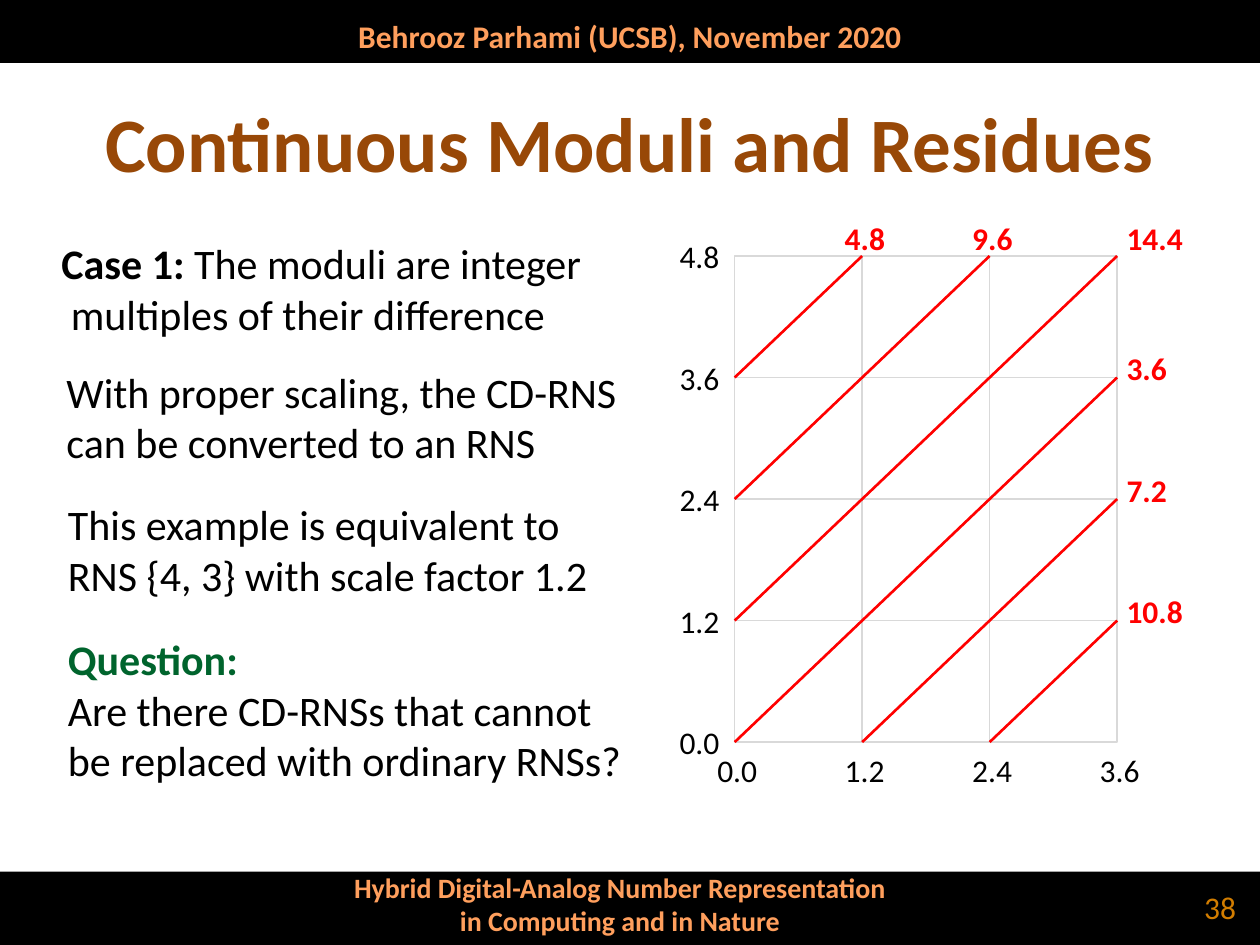
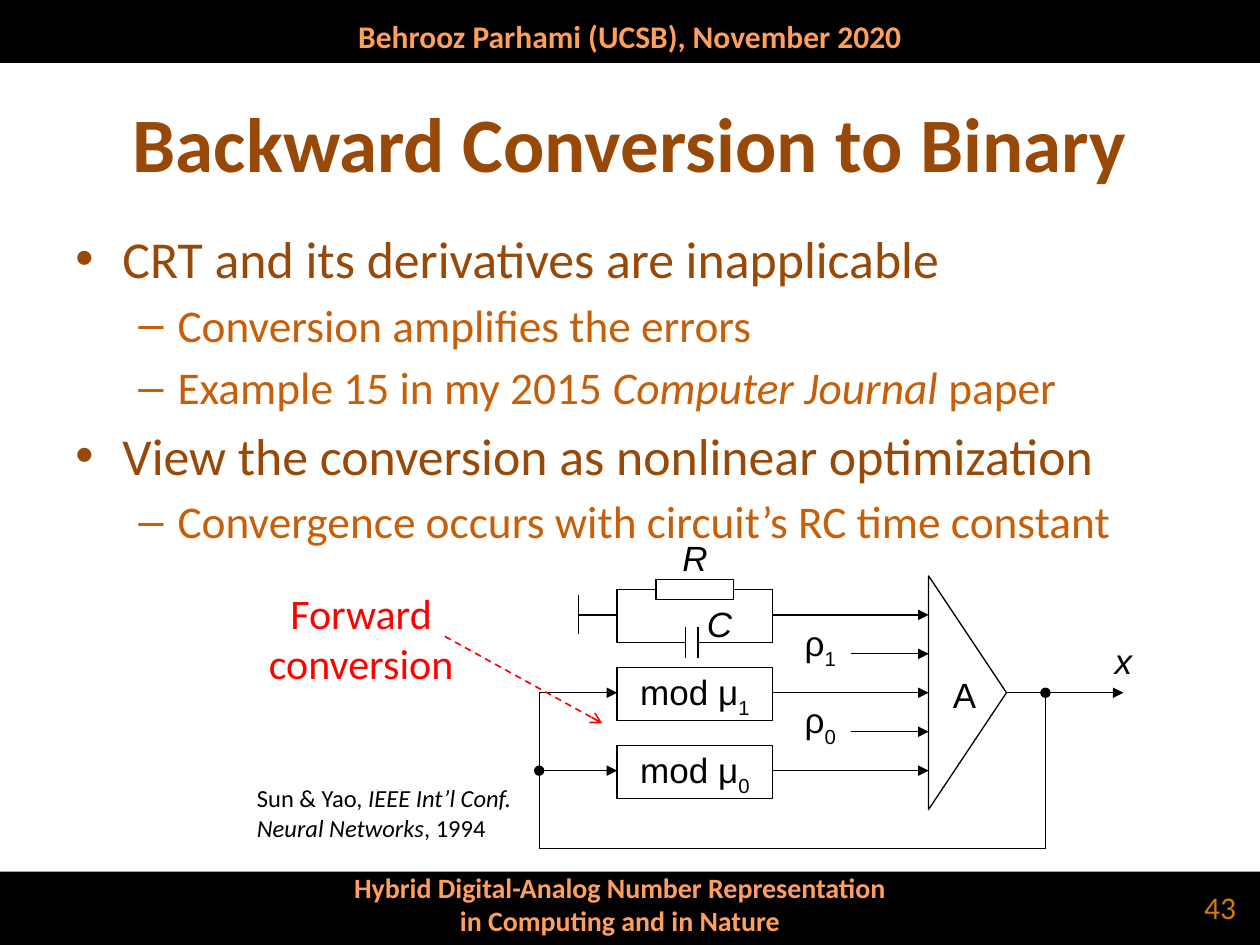
from lxml import etree
from pptx import Presentation
from pptx.dml.color import RGBColor
from pptx.enum.dml import MSO_LINE
from pptx.enum.shapes import MSO_CONNECTOR, MSO_SHAPE
from pptx.enum.text import MSO_ANCHOR, PP_ALIGN
from pptx.oxml.ns import qn
from pptx.util import Cm, Pt

BLACK = RGBColor(0x00, 0x00, 0x00)
WHITE = RGBColor(0xFF, 0xFF, 0xFF)
RED = RGBColor(0xFF, 0x00, 0x00)
GREEN = RGBColor(0x00, 0x64, 0x2D)
BROWN = RGBColor(0x98, 0x48, 0x07)
ORANGE = RGBColor(0xC7, 0x5F, 0x09)
BAND_TEXT = RGBColor(0xFF, 0x9F, 0x5D)
NUMBER = RGBColor(0xD2, 0x7D, 0x00)
GRID = RGBColor(0xD9, 0xD9, 0xD9)

LEFT, CENTER, RIGHT = PP_ALIGN.LEFT, PP_ALIGN.CENTER, PP_ALIGN.RIGHT
TOP, MIDDLE = MSO_ANCHOR.TOP, MSO_ANCHOR.MIDDLE
RECTANGLE = MSO_SHAPE.RECTANGLE
STRAIGHT = MSO_CONNECTOR.STRAIGHT
DASH = MSO_LINE.DASH

WIDTH, HEIGHT = 25.4, 19.05
BODY_FONT, CIRCUIT_FONT = "Calibri", "Arial"

# Bullet levels: symbol, left margin, hanging indent, size, space before, colour
BULLETS = [("•", 0.95, 0.95, 29.6, 5.5, BROWN),
           ("–", 2.06, 0.79, 25.9, 4.5, ORANGE)]


class Deck:
    """Holds the shared style and the current slide; positions are in centimetres."""

    def __init__(self):
        self.presentation = Presentation()
        self.presentation.slide_width = Cm(WIDTH)
        self.presentation.slide_height = Cm(HEIGHT)
        self.slide = None

    def new_slide(self, title, number, title_width):
        layout = self.presentation.slide_layouts[6]
        self.slide = self.presentation.slides.add_slide(layout)
        self.rectangle(0, 17.57, WIDTH, 1.48, BLACK)
        self.text(2.34, 17.42, 20.32, 1.63,
                  ["Hybrid Digital-Analog Number Representation",
                   "in Computing and in Nature"],
                  16, BAND_TEXT, bold=True, align=CENTER)
        self.rectangle(0, 0, WIDTH, 1.27, BLACK)
        self.text(0, 0.08, WIDTH, 1.27, ["Behrooz Parhami (UCSB), November 2020"],
                  18, BAND_TEXT, bold=True, align=CENTER, anchor=MIDDLE)
        self.text(19.25, 17.78, 5.92, 1.02, [str(number)],
                  18, NUMBER, align=RIGHT, anchor=MIDDLE)
        self.text((WIDTH - title_width) / 2, 1.27, title_width, 3.18, [title],
                  44, BROWN, bold=True, align=CENTER, anchor=MIDDLE)

    def rectangle(self, left, top, width, height, fill, line=None):
        shape = self.slide.shapes.add_shape(
            RECTANGLE, Cm(left), Cm(top), Cm(width), Cm(height))
        shape.shadow.inherit = False
        shape.fill.solid()
        shape.fill.fore_color.rgb = fill
        if line is None:
            shape.line.fill.background()
        else:
            shape.line.color.rgb = line
            shape.line.width = Pt(0.75)

    def outline(self, points):
        """Draw a closed, unfilled black outline through the points."""
        corners = [(Cm(x), Cm(y)) for x, y in points]
        builder = self.slide.shapes.build_freeform(*corners[0])
        builder.add_line_segments(corners[1:], close=True)
        shape = builder.convert_to_shape()
        shape.shadow.inherit = False
        shape.fill.background()
        shape.line.color.rgb = BLACK
        shape.line.width = Pt(0.75)

    def line(self, start, end, color=BLACK, width=0.75, head=None, tail=None, dash=None):
        connector = self.slide.shapes.add_connector(
            STRAIGHT, Cm(start[0]), Cm(start[1]), Cm(end[0]), Cm(end[1]))
        connector.line.color.rgb = color
        connector.line.width = Pt(width)
        if dash is not None:
            connector.line.dash_style = dash
        properties = connector._element.spPr
        for tag, kind in (("a:headEnd", head), ("a:tailEnd", tail)):
            if kind:
                etree.SubElement(properties.find(qn("a:ln")), qn(tag), type=kind)
        etree.SubElement(properties, qn("a:effectLst"))

    def text_frame(self, left, top, width, height, anchor=TOP, wrap=True):
        box = self.slide.shapes.add_textbox(Cm(left), Cm(top), Cm(width), Cm(height))
        frame = box.text_frame
        frame.word_wrap = wrap
        frame.vertical_anchor = anchor
        return frame

    def fill_paragraph(self, paragraph, content, size, color, font=BODY_FONT,
                       bold=False, italic=False):
        """Content is a string or a list of (text, style) with style "", bold, italic or sub."""
        paragraph.font.name = font
        paragraph.font.size = Pt(size)
        paragraph.font.color.rgb = color
        paragraph.font.bold = bold
        paragraph.font.italic = italic
        runs = [(content, "")] if isinstance(content, str) else content
        for text, style in runs:
            run = paragraph.add_run()
            run.text = text
            if style == "bold":
                run.font.bold = True
            elif style == "italic":
                run.font.italic = True
            elif style == "sub":
                run._r.get_or_add_rPr().set("baseline", "-30000")

    def text(self, left, top, width, height, paragraphs, size, color, bold=False,
             align=LEFT, anchor=TOP, wrap=True):
        frame = self.text_frame(left, top, width, height, anchor, wrap)
        for index, content in enumerate(paragraphs):
            paragraph = frame.add_paragraph() if index else frame.paragraphs[0]
            paragraph.alignment = align
            self.fill_paragraph(paragraph, content, size, color, bold=bold)
        return frame

    def circuit_label(self, left, top, width, content, italic=False):
        frame = self.text_frame(left, top, width, 1.25)
        frame.margin_left = frame.margin_right = 0
        frame.margin_top = frame.margin_bottom = 0
        paragraph = frame.paragraphs[0]
        paragraph.alignment = CENTER
        self.fill_paragraph(paragraph, content, 20, BLACK, CIRCUIT_FONT, italic=italic)

    def bullets(self, left, top, width, height, items):
        frame = self.text_frame(left, top, width, height)
        for index, (level, content) in enumerate(items):
            symbol, margin, hanging, size, space, color = BULLETS[level]
            paragraph = frame.add_paragraph() if index else frame.paragraphs[0]
            if index:
                paragraph.space_before = Pt(space)
            properties = paragraph._p.get_or_add_pPr()
            properties.set("marL", str(Cm(margin)))
            properties.set("indent", str(-Cm(hanging)))
            etree.SubElement(properties, qn("a:buFont"), typeface="Arial")
            etree.SubElement(properties, qn("a:buChar"), char=symbol)
            self.fill_paragraph(paragraph, content, size, color)


def draw_residue_grid(deck):
    """Draw the grid of residues and the diagonal path that wraps at its edges."""
    columns, rows, step = 3, 4, 1.2
    cell_width, cell_height = 2.57, 2.45
    left, bottom = 14.81, 14.96

    def point(column, row):
        return left + column * cell_width, bottom - row * cell_height

    def label(x, y, value, color=BLACK, bold=False):
        width = 1.32 if value < 10 else 1.65
        deck.text(x, y, width, 1.02, [f"{value:.1f}"], 18, color, bold=bold, wrap=False)

    for row in range(rows, 0, -1):
        for column in range(columns):
            deck.rectangle(*point(column, row), cell_width, cell_height, WHITE, GRID)
    for column in range(columns + 1):
        x, y = point(column, 0)
        label(x - 0.6, y + 0.05, column * step)
    for row in range(rows + 1):
        label(13.45, point(0, row)[1] - 0.5, row * step)

    column = row = steps = 0
    while steps < columns * rows:
        length = min(columns - column, rows - row)
        end_column, end_row = column + length, row + length
        steps += length
        x, y = point(end_column, end_row)
        deck.line(point(column, row), (x, y), RED, 1.5)
        label(x - (0.06 if end_column == columns else 0.6),
              y - (0.86 if end_row == rows else 0.69), steps * step, RED, True)
        column, row = end_column % columns, end_row % rows


def draw_circuit(deck):
    """Draw the feedback circuit on a square grid of columns and rows."""
    unit = 0.785

    def at(column, row):
        return 10.87 + column * unit, 11.61 + row * unit

    def block(column, row, width, height, line=BLACK):
        deck.rectangle(*at(column, row), width * unit, height * unit, WHITE, line)

    def wire(start, end, head=None, tail=None):
        deck.line(at(*start), at(*end), head=head, tail=tail)

    def label(column, row, width, content, italic=False):
        deck.circuit_label(*at(column, row), width * unit, content, italic)

    for row in (1, 3, 5):
        block(2, row - 0.65, 4, 1.36)
        wire((6, row), (10, row), tail="triangle")
    for row in (2, 4):
        wire((8, row), (10, row), tail="triangle")
    for row, index in ((3, "1"), (5, "0")):
        label(1, row - 0.58, 6, [("mod μ", ""), (index, "sub")])
        label(6.22, row - 1.84, 2, [("ρ", ""), (index, "sub")])

    # Resistor, capacitor and ground
    block(3, 0.1, 2, 0.5)
    block(3.75, 1.3, 0.33, 0.8, None)
    for column in (3.75, 4.08):
        wire((column, 1.3), (column, 2.1))
    wire((2, 1), (1, 1))
    wire((1, 0.5), (1, 1.5))
    label(3, -1, 2, "R", True)
    label(3.13, 0.68, 3, "C", True)

    # Amplifier, output and feedback
    deck.outline([at(10, 0), at(12, 3), at(10, 6)])
    label(9.42, 2.5, 3, "A")
    wire((12, 3), (15, 3), tail="triangle")
    label(14, 1.62, 2, "x", True)
    wire((13, 3), (13, 7), head="oval")
    wire((13, 7), (0, 7))
    wire((0, 7), (0, 3))
    wire((0, 3), (2, 3), tail="triangle")
    wire((0, 5), (2, 5), head="oval", tail="triangle")


def build_moduli_slide(deck):
    deck.new_slide("Continuous Moduli and Residues", 38, WIDTH)
    draw_residue_grid(deck)
    case = deck.text(0.99, 4.67, 11.25, 2.31,
                     [[("Case 1: ", "bold"), ("The moduli are integer", "")],
                      "multiples of their difference"], 24, BLACK, wrap=False)
    case.paragraphs[1]._p.get_or_add_pPr().set("marL", str(Cm(0.19)))
    deck.text(1.09, 7.26, 11.71, 2.31,
              ["With proper scaling, the CD-RNS", "can be converted to an RNS"],
              24, BLACK, wrap=False)
    deck.text(1.12, 9.93, 11.05, 2.31,
              ["This example is equivalent to", "RNS {4, 3} with scale factor 1.2"],
              24, BLACK, wrap=False)
    question = deck.text(1.12, 12.65, 11.76, 4.37,
                         [[("Question:", "bold")],
                          "Are there CD-RNSs that cannot be replaced with ordinary RNSs?"],
                         24, BLACK)
    question.paragraphs[0].runs[0].font.color.rgb = GREEN


def build_conversion_slide(deck):
    deck.new_slide("Backward Conversion to Binary", 43, 22.86)
    deck.bullets(1.27, 4.45, 23.06, 6.76, [
        (0, "CRT and its derivatives are inapplicable"),
        (1, "Conversion amplifies the errors"),
        (1, [("Example 15 in my 2015 ", ""), ("Computer Journal ", "italic"), ("paper", "")]),
        (0, "View the conversion as nonlinear optimization"),
        (1, "Convergence occurs with circuit’s RC time constant"),
    ])
    draw_circuit(deck)
    deck.text(4.93, 15.67, 5.97, 2.06,
              [[("Sun & Yao,", ""), (" IEEE Int’l Conf. Neural Networks", "italic"),
                (", 1994", "")]], 14, BLACK)
    deck.text(4.27, 11.71, 6.02, 3.33, ["Forward conversion"], 24, RED, align=CENTER)
    deck.line((8.97, 12.83), (12.14, 14.58), RED, 0.94, tail="arrow", dash=DASH)


def main():
    deck = Deck()
    build_moduli_slide(deck)
    build_conversion_slide(deck)
    deck.presentation.save("out.pptx")


if __name__ == "__main__":
    main()
